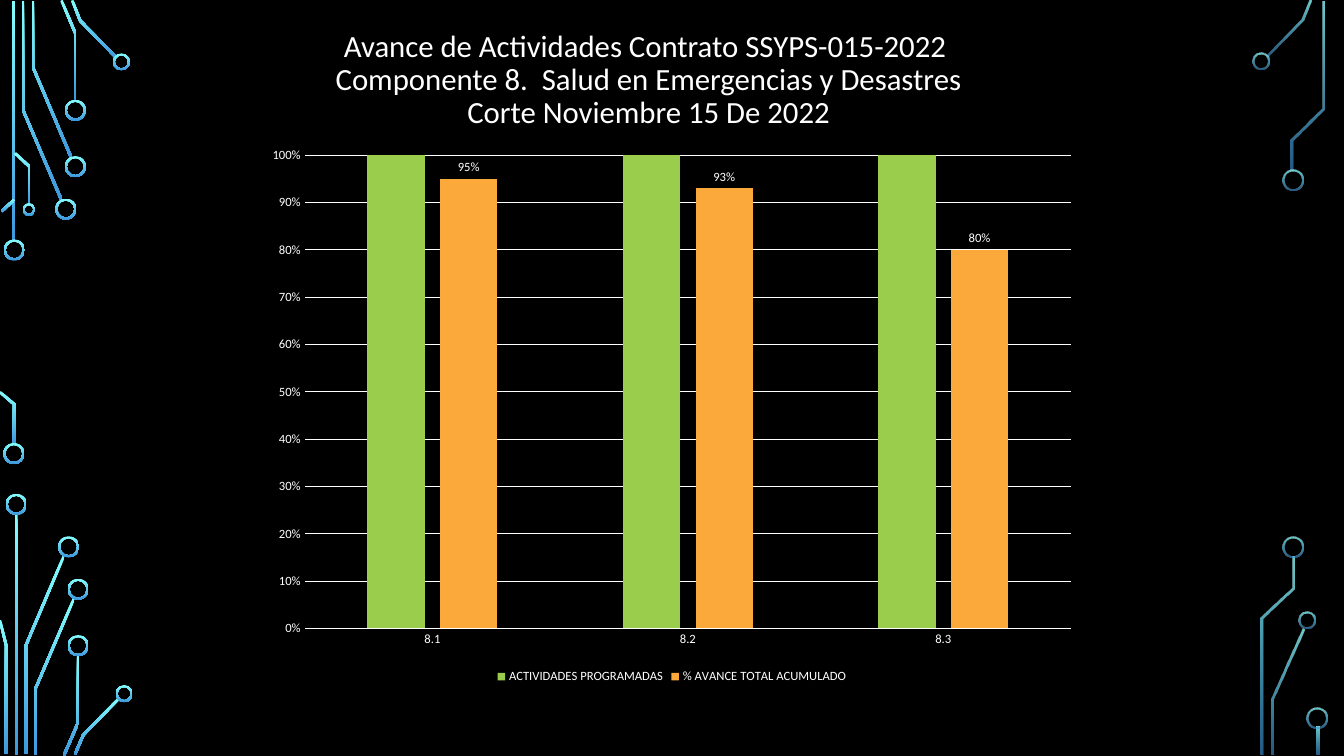
import math
from dataclasses import dataclass

from lxml import etree
from pptx import Presentation
from pptx import util as u
from pptx.chart import data as chart_data
from pptx.dml import color
from pptx.enum import chart as ch
from pptx.enum import shapes, text
from pptx.oxml import ns


@dataclass(frozen=True)
class Theme:
    font: str = "Calibri"
    background: str = "000000"
    ink: str = "FFFFFF"
    glow: tuple = ("82FFFF", "3D97DE")
    planned: str = "9ACD4C"
    progress: str = "FAA93A"
    title_size: int = 22
    chart_size: int = 10
    label_size: int = 9
    trace_width: float = 0.065
    ring_wall: float = 0.05


TITLE = (
    "Avance de Actividades Contrato SSYPS-015-2022 \n"
    "Componente 8.  Salud en Emergencias y Desastres\n"
    "Corte Noviembre 15 De 2022"
)
COMPONENTS = ("8.1", "8.2", "8.3")
PLANNED = ("ACTIVIDADES PROGRAMADAS", (1, 1, 1))
PROGRESS = ("% AVANCE TOTAL ACUMULADO", (0.95, 0.93, 0.8))

LARGE, MEDIUM, SMALL = 0.53, 0.43, 0.32

LEFT_TRACES = (
    ((0.34, 0.03), (0.34, 6.1)),
    ((0.58, 0.03), (0.58, 2.77), (1.55, 5.04)),
    ((0.83, 0.03), (0.83, 1.69), (1.8, 3.98)),
    ((1.55, 0.01), (1.9, 0.84), (1.9, 2.54)),
    ((1.82, 0.01), (2.02, 0.52), (2.93, 1.45)),
    ((0.04, 5.33), (0.36, 5.03)),
    ((0, 9.88), (0.36, 10.19), (0.36, 11.2)),
    ((0.38, 3.86), (0.74, 4.2), (0.74, 5.16)),
    ((0.41, 12.95), (0.41, 19.02)),
    ((0.65, 19), (0.65, 16.27), (1.61, 14.01)),
    ((0, 15.63), (0.16, 16.28), (0.16, 19)),
    ((0.9, 19.02), (0.9, 17.34), (1.87, 15.07)),
    ((1.61, 19.04), (1.97, 18.21), (1.97, 16.51)),
    ((1.89, 19.01), (2.1, 18.52), (3, 17.6)),
)
LEFT_RINGS = (
    (0.36, 6.3, LARGE), (0.35, 11.43, LARGE), (1.66, 5.27, LARGE),
    (1.9, 4.2, LARGE), (1.9, 2.78, LARGE), (3.06, 1.56, MEDIUM),
    (0.73, 5.28, SMALL), (0.41, 12.71, LARGE), (1.73, 13.78, LARGE),
    (1.97, 14.85, LARGE), (1.97, 16.27, LARGE), (3.13, 17.48, MEDIUM),
)
RIGHT_TRACES = (
    ((31.93, 1.41), (32.83, 0.5), (33.03, 0.01)),
    ((32.07, 19.02), (32.07, 17.61), (32.84, 15.84)),
    ((32.56, 4.29), (32.56, 3.52), (33.34, 2.73), (33.34, 0.03)),
    ((31.81, 19.02), (31.81, 15.58), (32.6, 14.82), (32.6, 14.02)),
    ((33.21, 18.31), (33.21, 19.02)),
)
RIGHT_RINGS = (
    (31.79, 1.54, MEDIUM), (32.58, 4.53, LARGE), (32.93, 15.63, MEDIUM),
    (32.59, 13.78, LARGE), (33.18, 18.09, LARGE),
)


def rgb(value):
    return color.RGBColor.from_string(value)


def ribbon(route, width):
    normals = []
    for (x1, y1), (x2, y2) in zip(route, route[1:]):
        length = math.hypot(x2 - x1, y2 - y1)
        normals.append(((y1 - y2) / length, (x2 - x1) / length))
    one_side, other_side = [], []
    for (x, y), a, b in zip(route, normals[:1] + normals, normals + normals[-1:]):
        reach = width / 2 / (1 + a[0] * b[0] + a[1] * b[1])
        dx, dy = (a[0] + b[0]) * reach, (a[1] + b[1]) * reach
        one_side.append((u.Cm(x + dx), u.Cm(y + dy)))
        other_side.append((u.Cm(x - dx), u.Cm(y - dy)))
    return one_side + other_side[::-1]


class ProgressSlide:
    def __init__(self, presentation, theme):
        self.theme = theme
        self.slide = presentation.slides.add_slide(presentation.slide_layouts[5])
        backdrop = self.slide.background.fill
        backdrop.solid()
        backdrop.fore_color.rgb = rgb(theme.background)

    def style_font(self, font, size):
        font.name = self.theme.font
        font.size = u.Pt(size)
        font.color.rgb = rgb(self.theme.ink)

    def glow(self, shape, opacities):
        shape.shadow.inherit = False
        shape.line.fill.background()
        shape.fill.gradient()
        shape.fill.gradient_angle = 270
        for stop, shade in zip(shape.fill.gradient_stops, self.theme.glow):
            stop.color.rgb = rgb(shade)
        shades = shape.fill._xPr.iter(ns.qn("a:srgbClr"))
        for shade, opacity in zip(shades, opacities):
            if opacity < 100:
                etree.SubElement(shade, ns.qn("a:alpha"), val=str(opacity * 1000))

    def trace(self, route, opacities):
        start, *rest = ribbon(route, self.theme.trace_width)
        builder = self.slide.shapes.build_freeform(*start)
        builder.add_line_segments(rest, close=True)
        self.glow(builder.convert_to_shape(), opacities)

    def ring(self, x, y, diameter, opacities):
        ring = self.slide.shapes.add_shape(
            shapes.MSO_SHAPE.DONUT, u.Cm(x - diameter / 2), u.Cm(y - diameter / 2),
            u.Cm(diameter), u.Cm(diameter))
        ring.adjustments[0] = self.theme.ring_wall / diameter
        self.glow(ring, opacities)

    def circuit(self, traces, rings, opacities=(100, 100)):
        for route in traces:
            self.trace(route, opacities)
        for x, y, diameter in rings:
            self.ring(x, y, diameter, opacities)

    def title(self, wording, left, top, width, height):
        heading = self.slide.shapes.title
        heading.left, heading.top = u.Cm(left), u.Cm(top)
        heading.width, heading.height = u.Cm(width), u.Cm(height)
        frame = heading.text_frame
        frame.text = wording
        frame.word_wrap = True
        frame.auto_size = text.MSO_AUTO_SIZE.NONE
        frame.vertical_anchor = text.MSO_ANCHOR.TOP
        for paragraph in frame.paragraphs:
            paragraph.alignment = text.PP_ALIGN.CENTER
            paragraph.line_spacing = 0.9
            paragraph.space_before = u.Pt(0)
            for run in paragraph.runs:
                self.style_font(run.font, self.theme.title_size)

    def axis_line(self, line):
        line.color.rgb = rgb(self.theme.ink)
        line.width = u.Pt(0.75)

    def columns(self, categories, series, left, top, width, height):
        figures = chart_data.CategoryChartData(number_format="0%")
        figures.categories = categories
        for name, values in series:
            figures.add_series(name, values)
        chart = self.slide.shapes.add_chart(
            ch.XL_CHART_TYPE.COLUMN_CLUSTERED, u.Cm(left), u.Cm(top),
            u.Cm(width), u.Cm(height), figures).chart
        label_size = self.theme.label_size
        self.style_font(chart.font, self.theme.chart_size)
        chart.has_title = False
        chart.has_legend = True
        chart.legend.position = ch.XL_LEGEND_POSITION.BOTTOM
        chart.legend.include_in_layout = False
        self.style_font(chart.legend.font, label_size)

        for axis in (chart.category_axis, chart.value_axis):
            axis.major_tick_mark = axis.minor_tick_mark = ch.XL_TICK_MARK.NONE
            self.style_font(axis.tick_labels.font, label_size)
        self.axis_line(chart.category_axis.format.line)
        percent = chart.value_axis
        percent.minimum_scale, percent.maximum_scale, percent.major_unit = 0, 1, 0.1
        percent.format.line.fill.background()
        percent.tick_labels.number_format = "0%"
        percent.tick_labels.number_format_is_linked = False
        self.axis_line(percent.major_gridlines.format.line)

        plot = chart.plots[0]
        plot.vary_by_categories = False
        plot.gap_width, plot.overlap = 219, -27
        for bars, shade in zip(plot.series, (self.theme.planned, self.theme.progress)):
            bars.format.fill.solid()
            bars.format.fill.fore_color.rgb = rgb(shade)
            bars.format.line.fill.background()
        labels = plot.series[1].data_labels
        labels.show_value = True
        labels.position = ch.XL_LABEL_POSITION.OUTSIDE_END
        labels.number_format = "0%"
        labels.number_format_is_linked = False
        self.style_font(labels.font, label_size)


def main():
    presentation = Presentation()
    presentation.slide_width, presentation.slide_height = u.Cm(33.87), u.Cm(19.05)
    report = ProgressSlide(presentation, Theme())
    report.circuit(LEFT_TRACES, LEFT_RINGS)
    report.circuit(RIGHT_TRACES, RIGHT_RINGS, opacities=(80, 60))
    report.columns(COMPONENTS, (PLANNED, PROGRESS), 6.45, 3.45, 20.96, 13.89)
    report.title(TITLE, 2.59, 0.64, 27.51, 4.11)
    presentation.save("out.pptx")


if __name__ == "__main__":
    main()
